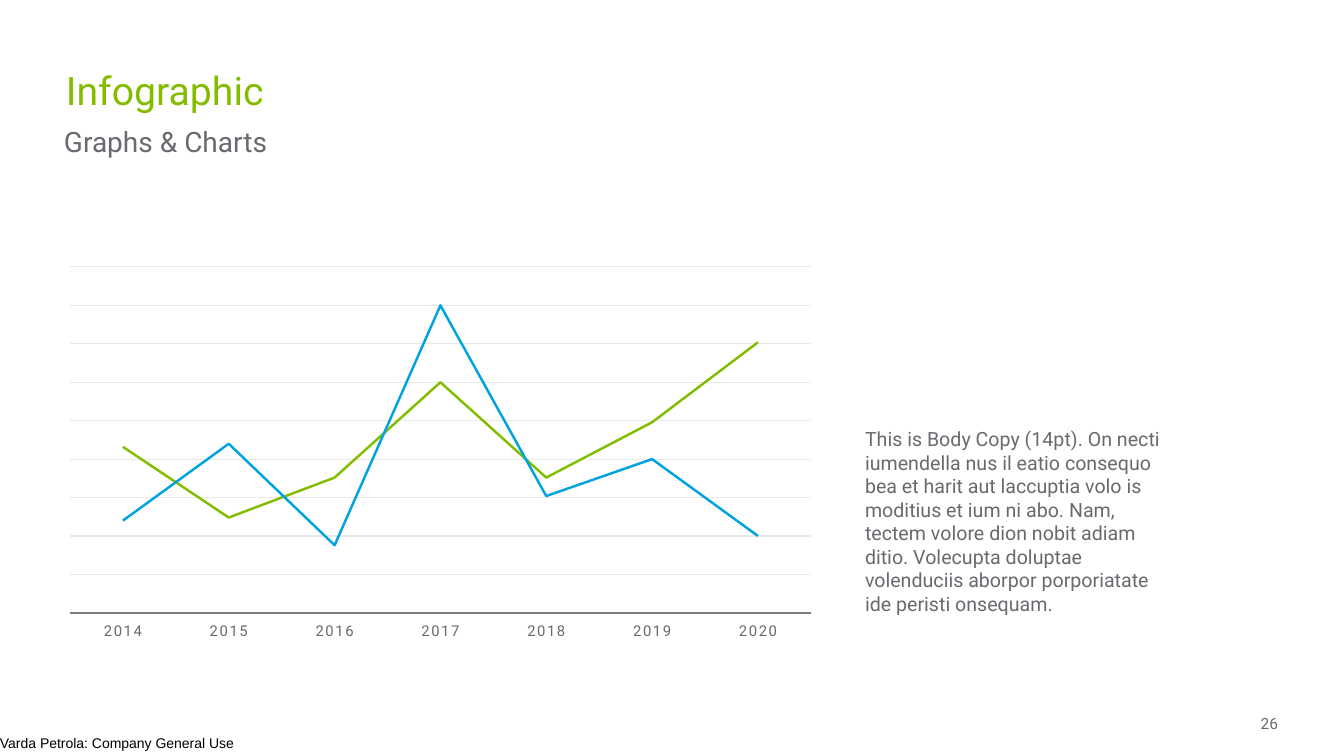
from dataclasses import dataclass

from lxml.etree import SubElement
from pptx import Presentation
from pptx.chart.data import CategoryChartData
from pptx.dml.color import RGBColor
from pptx.enum.chart import XL_CHART_TYPE, XL_MARKER_STYLE, XL_TICK_LABEL_POSITION, XL_TICK_MARK
from pptx.enum.text import MSO_ANCHOR, MSO_AUTO_SIZE, PP_ALIGN
from pptx.oxml.ns import qn
from pptx.util import Emu, Pt


@dataclass(frozen=True)
class Theme:
    font: str = "Roboto"
    footer_font: str = "Arial"
    green: str = "84BD00"
    blue: str = "00A3E0"
    gray: str = "676A6E"
    black: str = "000000"
    axis: str = "7D7D7D"
    grid: str = "E8E9E9"
    title_size: float = 28
    subtitle_size: float = 20
    body_size: float = 14
    number_size: float = 11
    label_size: float = 10.6
    footer_size: float = 10


THEME = Theme()
YEARS = [str(year) for year in range(2014, 2021)]
TRENDS = [
    ("Series 1", THEME.green, (54, 31, 44, 75, 44, 62, 88)),
    ("Series 2", THEME.blue, (30, 55, 22, 100, 38, 50, 25)),
]
BODY = (
    "This is Body Copy (14pt). On necti iumendella nus il eatio consequo bea et harit aut "
    "laccuptia volo is moditius et ium ni abo. Nam, tectem volore dion nobit adiam ditio. "
    "Volecupta doluptae volenduciis aborpor porporiatate ide peristi onsequam."
)


def px(length):
    return Emu(round(length * 914400 / 100.8))


def style_font(font, size, color, name=THEME.font):
    font.name = name
    font.size = Pt(size)
    font.bold = False
    font.color.rgb = RGBColor.from_string(color)


def style_line(line, color, width):
    line.color.rgb = RGBColor.from_string(color)
    line.width = Pt(width)


def fill_text(shape, text, size, color, name=THEME.font, margins=(10, 5, 10, 5),
              align=PP_ALIGN.LEFT, anchor=MSO_ANCHOR.TOP, wrap=True):
    frame = shape.text_frame
    frame.auto_size = MSO_AUTO_SIZE.NONE
    frame.word_wrap = wrap
    frame.vertical_anchor = anchor
    (frame.margin_left, frame.margin_top,
     frame.margin_right, frame.margin_bottom) = map(px, margins)
    paragraph = frame.paragraphs[0]
    paragraph.alignment = align
    run = paragraph.add_run()
    run.text = text
    style_font(run.font, size, color, name)


def add_title(slide, box, text):
    title = slide.shapes.title
    title.left, title.top, title.width, title.height = map(px, box)
    fill_text(title, text, THEME.title_size, THEME.green, margins=(0, 5, 0, 5))


def add_text(slide, box, text, size, color, **options):
    fill_text(slide.shapes.add_textbox(*map(px, box)), text, size, color, **options)


def place_plot(chart, box, plot_box):
    """Fix the inner plot area, given in slide px, inside the chart box."""
    plot_area = chart._chartSpace.chart.plotArea
    for old in plot_area.findall(qn("c:layout")):
        plot_area.remove(old)
    layout = plot_area.makeelement(qn("c:layout"), {})
    plot_area.insert(0, layout)
    manual = SubElement(layout, qn("c:manualLayout"))
    left, top, width, height = box
    x, y, w, h = plot_box
    settings = {
        "layoutTarget": "inner", "xMode": "edge", "yMode": "edge",
        "x": (x - left) / width, "y": (y - top) / height,
        "w": w / width, "h": h / height,
    }
    for tag, value in settings.items():
        SubElement(manual, qn(f"c:{tag}")).set("val", str(value))


def add_trend_chart(slide, box, plot_box):
    trend_data = CategoryChartData()
    trend_data.categories = YEARS
    for name, _, values in TRENDS:
        trend_data.add_series(name, values)
    chart = slide.shapes.add_chart(XL_CHART_TYPE.LINE, *map(px, box), trend_data).chart
    chart.has_legend = False
    chart.has_title = False
    style_font(chart.font, THEME.footer_size, THEME.gray)

    # Trend lines
    chart.plots[0].vary_by_categories = False
    for series, (_, color, _) in zip(chart.plots[0].series, TRENDS):
        series.smooth = False
        series.marker.style = XL_MARKER_STYLE.NONE
        style_line(series.format.line, color, 1.75)

    # Year axis
    years = chart.category_axis
    years.major_tick_mark = years.minor_tick_mark = XL_TICK_MARK.NONE
    years.tick_label_position = XL_TICK_LABEL_POSITION.LOW
    years.has_major_gridlines = False
    style_line(years.format.line, THEME.axis, 1.5)
    label_font = years.tick_labels.font
    style_font(label_font, THEME.label_size, THEME.gray)
    label_font._element.set("spc", "120")

    # Hidden value axis with gridlines
    scale = chart.value_axis
    scale.minimum_scale, scale.maximum_scale, scale.major_unit = 0, 112.5, 12.5
    scale.has_major_gridlines = True
    style_line(scale.major_gridlines.format.line, THEME.grid, 0.75)
    scale.visible = False

    place_plot(chart, box, plot_box)


def main():
    deck = Presentation()
    deck.slide_width, deck.slide_height = px(1344), px(756)
    slide = deck.slides.add_slide(deck.slide_layouts[5])

    # Heading
    add_title(slide, (66, 61, 499, 57), "Infographic")
    add_text(slide, (54, 120, 499, 57), "Graphs & Charts", THEME.subtitle_size, THEME.gray)

    # Chart and body copy
    add_trend_chart(slide, (54, 260, 771, 381), (70, 267, 741, 346))
    add_text(slide, (855, 407, 318, 329), BODY, THEME.body_size, THEME.gray,
             margins=(10, 20, 10, 5))

    # Page number and footer
    add_text(slide, (1239, 711, 39, 25), "26", THEME.number_size, THEME.gray,
             margins=(0, 5, 0, 5), align=PP_ALIGN.RIGHT, anchor=MSO_ANCHOR.MIDDLE)
    add_text(slide, (0, 729, 274, 27), "Varda Petrola: Company General Use",
             THEME.footer_size, THEME.black, name=THEME.footer_font,
             margins=(0, 0, 0, 0), anchor=MSO_ANCHOR.MIDDLE, wrap=False)

    deck.save("out.pptx")


if __name__ == "__main__":
    main()
